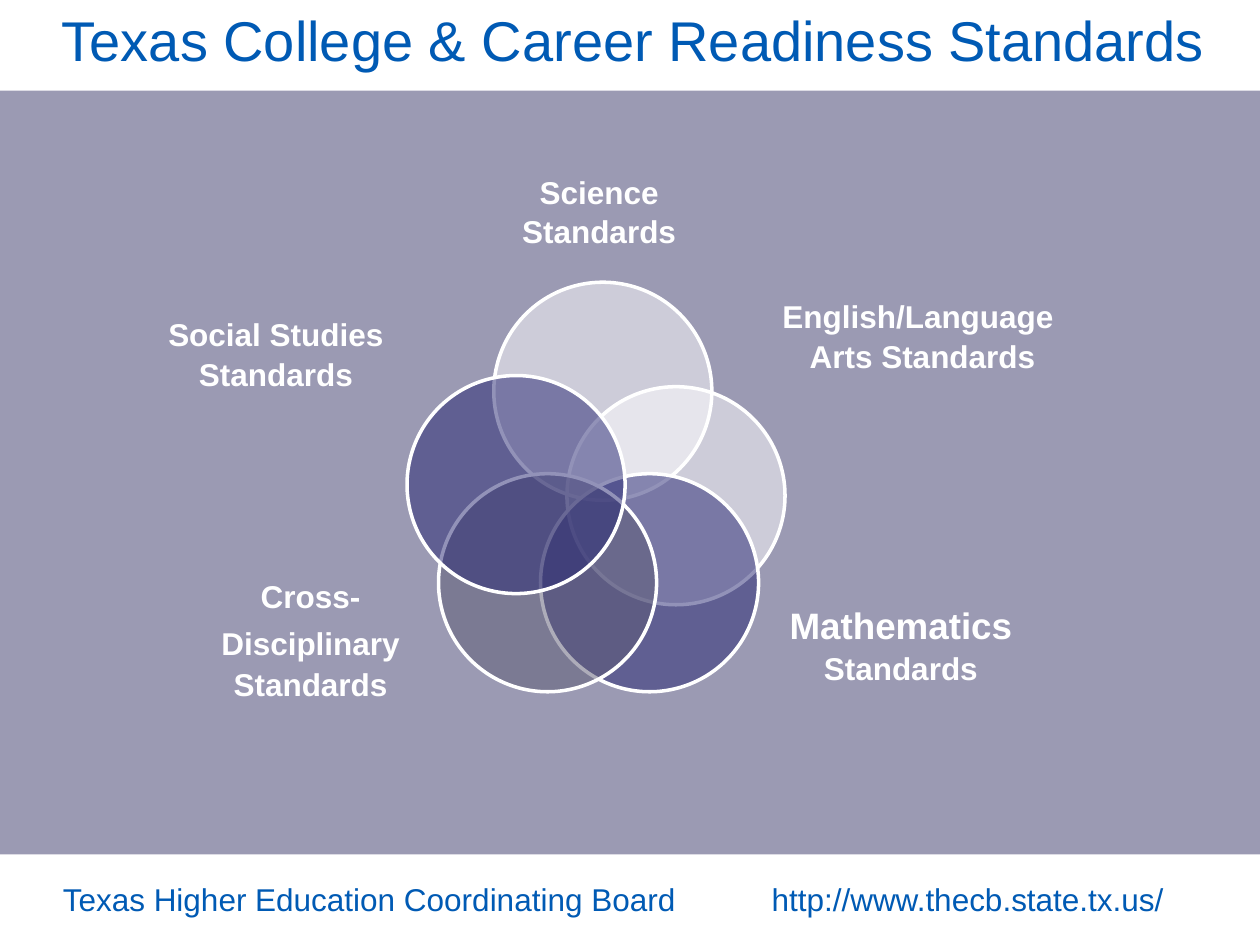
from lxml.etree import SubElement
from pptx import Presentation
from pptx.dml.color import RGBColor
from pptx.enum.shapes import MSO_SHAPE
from pptx.enum.text import MSO_ANCHOR, PP_ALIGN
from pptx.oxml.ns import qn
from pptx.util import Pt

WHITE, BLUE, NAVY, SLATE, LAVENDER = "FFFFFF", "005AB4", "262673", "5D5B75", "9B9AB3"
SLIDE_W, SLIDE_H, BAND_H = 720, 540, 51.84
DIAMETER = 124.6

# circle (left, top), colour, label box, paragraphs of (text, size) runs
STANDARDS = [
    ((282.2, 161.3), WHITE, (270, 78.5, 144.7, 83.5), [[("Science Standards", 18)]]),
    ((324, 221), WHITE, (430.6, 146.2, 193, 90.7),
     [[("English/Language ", 18)], [("Arts Standards", 18)]]),
    ((308.9, 270.7), NAVY, (450, 313.9, 129.6, 108),
     [[("Mathematics ", 21), ("Standards", 18)]]),
    ((250.6, 270.7), SLATE, (100.8, 319.7, 153.4, 90.7),
     [[("Cross-Disciplinary", 18), (" ", 22), ("Standards", 18)]]),
    ((232.6, 214.6), NAVY, (92.9, 156.2, 129.6, 90.7),
     [[("Social Studies Standards", 18)]]),
]


def rgb(colour):
    return RGBColor.from_string(colour)


def points(*lengths):
    return [Pt(length) for length in lengths]


def style_font(font, size, colour, bold=False):
    for name, value in {"name": "Arial", "size": Pt(size), "bold": bold}.items():
        setattr(font, name, value)
    font.color.rgb = rgb(colour)


def set_frame(frame, inset=None):
    settings = {"word_wrap": True, "vertical_anchor": MSO_ANCHOR.MIDDLE}
    if inset is not None:
        for side in ("left", "right", "top", "bottom"):
            settings[f"margin_{side}"] = Pt(inset)
    for name, value in settings.items():
        setattr(frame, name, value)


def add_band(slide, top):
    """Add a white strip behind everything else on the slide."""
    band = slide.shapes.add_shape(MSO_SHAPE.RECTANGLE, *points(0, top, SLIDE_W, BAND_H))
    band.shadow.inherit = False
    band.fill.solid()
    band.fill.fore_color.rgb = rgb(WHITE)
    band.line.fill.background()
    slide.shapes._spTree.insert(2, band._element)


def set_title(slide, text):
    title = slide.shapes.title
    box = dict(zip(("left", "top", "width", "height"), points(28.1, 0, 673.2, 45)))
    for name, value in box.items():
        setattr(title, name, value)
    set_frame(title.text_frame)
    title.text_frame.text = text
    paragraph = title.text_frame.paragraphs[0]
    paragraph.alignment = PP_ALIGN.LEFT
    style_font(paragraph.runs[0].font, 32, BLUE)


def add_circle(slide, position, colour):
    circle = slide.shapes.add_shape(
        MSO_SHAPE.OVAL, *points(*position, DIAMETER, DIAMETER))
    circle.shadow.inherit = False
    circle.fill.solid()
    circle.fill.fore_color.rgb = rgb(colour)
    solid = circle._element.spPr.find(qn("a:solidFill"))
    SubElement(solid[0], qn("a:alpha"), val="50000")
    circle.line.color.rgb = rgb(WHITE)
    circle.line.width = Pt(2)


def add_label(slide, box, paragraphs):
    frame = slide.shapes.add_textbox(*points(*box)).text_frame
    set_frame(frame, inset=0)
    for index, runs in enumerate(paragraphs):
        paragraph = frame.add_paragraph() if index else frame.paragraphs[0]
        paragraph.alignment = PP_ALIGN.CENTER
        paragraph.line_spacing = 1.05
        for text, size in runs:
            run = paragraph.add_run()
            run.text = text
            style_font(run.font, size, WHITE, bold=True)


def add_footer(slide, board, address):
    """Add the board's name and, at a tab stop, its web address."""
    frame = slide.shapes.add_textbox(*points(28.8, 489.6, 673.2, 48.2)).text_frame
    set_frame(frame)
    paragraph = frame.paragraphs[0]
    tabs = SubElement(paragraph._p.get_or_add_pPr(), qn("a:tabLst"))
    SubElement(tabs, qn("a:tab"), pos=str(Pt(405)), algn="l")
    run = paragraph.add_run()
    run.text = f"{board}\t{address}"
    style_font(run.font, 18, BLUE)


def main():
    presentation = Presentation()
    presentation.slide_width, presentation.slide_height = points(SLIDE_W, SLIDE_H)
    slide = presentation.slides.add_slide(presentation.slide_layouts[5])
    slide.background.fill.solid()
    slide.background.fill.fore_color.rgb = rgb(LAVENDER)
    for top in (SLIDE_H - BAND_H, 0):
        add_band(slide, top)
    set_title(slide, "Texas College & Career Readiness Standards")
    for position, colour, label_box, paragraphs in STANDARDS:
        add_circle(slide, position, colour)
        add_label(slide, label_box, paragraphs)
    add_footer(slide, "Texas Higher Education Coordinating Board",
               "http://www.thecb.state.tx.us/")
    presentation.save("out.pptx")


if __name__ == "__main__":
    main()
